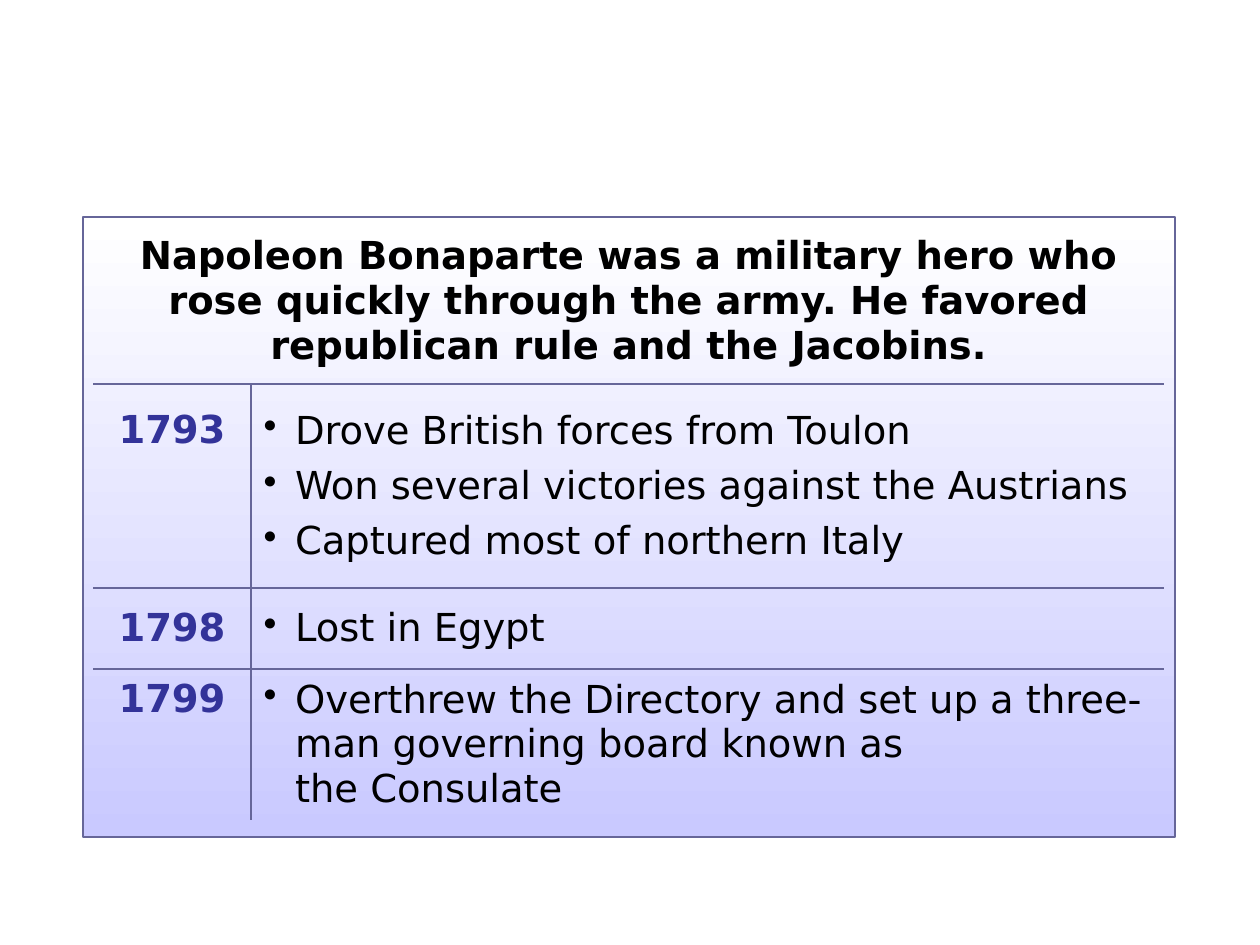
"""Build a slide with a dated table of Napoleon Bonaparte's rise to power."""
from lxml import etree
from pptx import Presentation, util as u
from pptx.dml.color import RGBColor
from pptx.enum import shapes, text
from pptx.oxml.ns import qn

HEADING = ("Napoleon Bonaparte was a military hero who rose quickly through "
           "the army. He favored republican rule and the Jacobins.")
EVENTS = [
    ("1793", ["Drove British forces from Toulon",
              "Won several victories against the Austrians",
              "Captured most of northern Italy"]),
    ("1798", ["Lost in Egypt"]),
    ("1799", ["Overthrew the Directory and set up a three-man governing board "
              "known as\vthe Consulate"]),
]
PANEL = (83, 217, 1092, 620)
TABLE_AT = (93, 218)
COLS = (158, 913)
ROWS = (166, 204, 81, 151)
YEAR_TOPS = (24, 18, 8)

BLACK = RGBColor(0x00, 0x00, 0x00)
WHITE = RGBColor(0xFF, 0xFF, 0xFF)
LILAC = RGBColor(0xC9, 0xC9, 0xFF)
SLATE = RGBColor(0x66, 0x66, 0x99)
INDIGO = RGBColor(0x33, 0x33, 0x99)
FONT = {"name": "DejaVu Sans", "size": u.Pt(22)}
CENTER = {"alignment": text.PP_ALIGN.CENTER}
BULLET = {"alignment": text.PP_ALIGN.LEFT, "space_after": u.Pt(6)}


def px(n):
    return round(n * 914400 / 126)


def write(cell, lines, layout, color, bold, bullet=False):
    tf = cell.text_frame
    tf.text = "\n".join(lines)
    for p in tf.paragraphs:
        for key, value in layout.items():
            setattr(p, key, value)
        for r in p.runs:
            for key, value in {**FONT, "bold": bold}.items():
                setattr(r.font, key, value)
            r.font.color.rgb = color
        if bullet:
            pPr = p._p.get_or_add_pPr()
            pPr.set("marL", str(u.Inches(0.25)))
            pPr.set("indent", str(-u.Inches(0.25)))
            etree.SubElement(pPr, qn("a:buChar"), char="•")


def set_borders(cell, visible):
    tcPr = cell._tc.get_or_add_tcPr()
    for side in "LRTB":
        ln = etree.SubElement(tcPr, qn("a:ln" + side), w=str(u.Pt(1)))
        if side in visible:
            fill = etree.SubElement(ln, qn("a:solidFill"))
            etree.SubElement(fill, qn("a:srgbClr"), val=str(SLATE))
        else:
            etree.SubElement(ln, qn("a:noFill"))


def add_panel(s):
    sp = s.shapes.add_shape(shapes.MSO_SHAPE.RECTANGLE, *map(px, PANEL))
    sp.shadow.inherit = False
    sp.fill.gradient()
    sp.fill.gradient_angle = 270
    for stop, color in zip(sp.fill.gradient_stops, (WHITE, LILAC)):
        stop.color.rgb = color
    sp.line.color.rgb = SLATE
    sp.line.width = u.Pt(1.5)


def add_timeline(s):
    size = (sum(COLS), sum(ROWS))
    table = s.shapes.add_table(len(ROWS), len(COLS),
                               *map(px, TABLE_AT + size)).table
    table.first_row = table.horz_banding = False
    for col, width in zip(table.columns, COLS):
        col.width = px(width)
    for i, (row, height) in enumerate(zip(table.rows, ROWS)):
        row.height = px(height)
        for j, cell in enumerate(row.cells):
            sides = "T" * (i > 0) + "B" * (i < len(ROWS) - 1)
            set_borders(cell, sides + "RL"[j] * (i > 0))
            cell.fill.background()
            cell.vertical_anchor = text.MSO_ANCHOR.MIDDLE

    table.cell(0, 0).merge(table.cell(0, 1))
    write(table.cell(0, 0), [HEADING], CENTER, BLACK, True)
    for i, ((year, events), top) in enumerate(zip(EVENTS, YEAR_TOPS), 1):
        year_cell = table.cell(i, 0)
        year_cell.vertical_anchor = text.MSO_ANCHOR.TOP
        year_cell.margin_top = px(top)
        write(year_cell, [year], CENTER, INDIGO, True)
        write(table.cell(i, 1), events, BULLET, BLACK, False, bullet=True)


def main():
    prs = Presentation()
    prs.slide_width, prs.slide_height = px(1260), px(945)
    s = prs.slides.add_slide(prs.slide_layouts[6])
    add_panel(s)
    add_timeline(s)
    prs.save("out.pptx")


if __name__ == "__main__":
    main()
